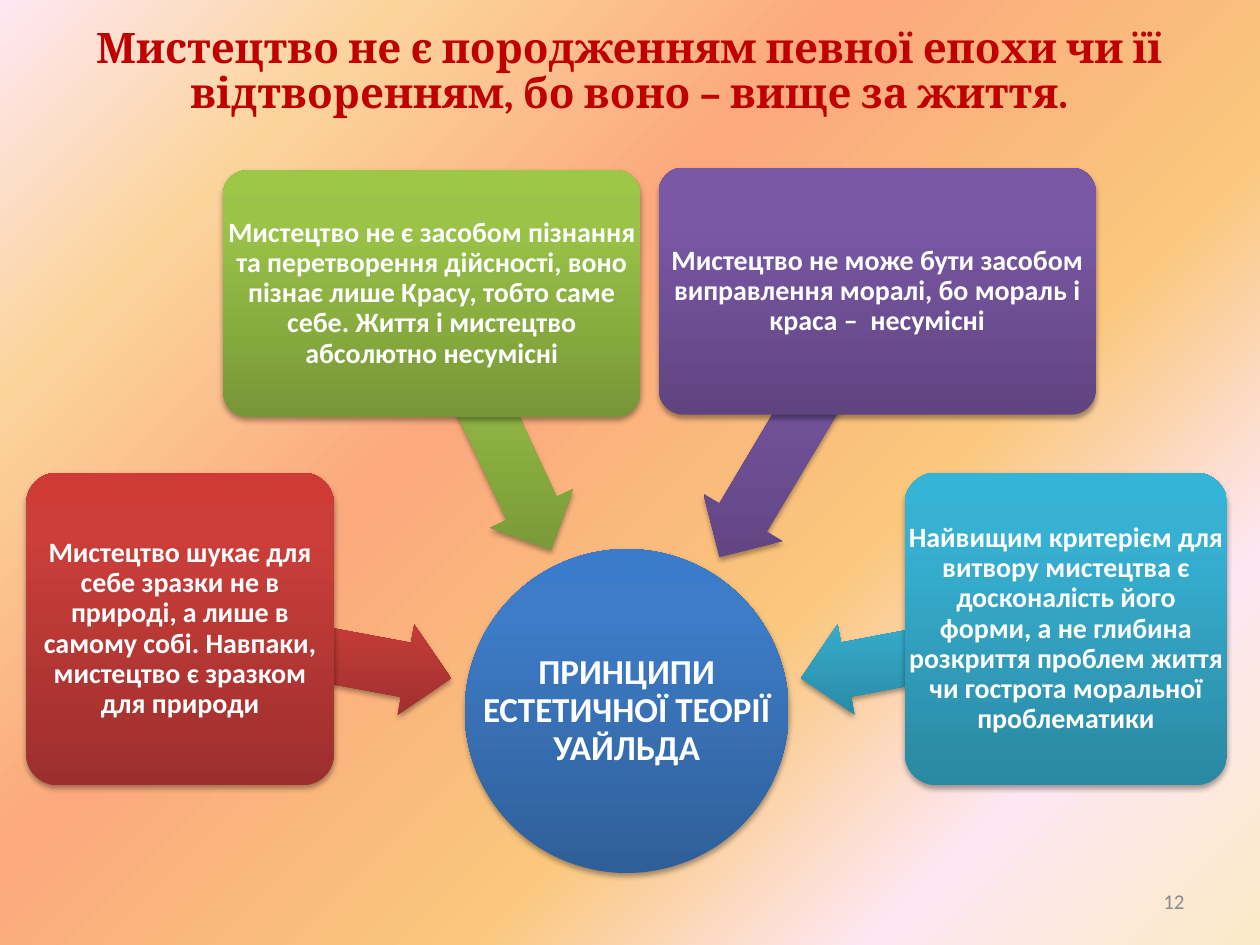
from lxml import etree
from pptx import Presentation
from pptx.dml.color import RGBColor
from pptx.enum.shapes import MSO_SHAPE
from pptx.enum.text import MSO_ANCHOR, PP_ALIGN
from pptx.oxml.ns import qn
from pptx.util import Cm, Pt

CIRCLE, ARROW, CARD = MSO_SHAPE.OVAL, MSO_SHAPE.LEFT_ARROW, MSO_SHAPE.ROUNDED_RECTANGLE
TOP, MIDDLE = MSO_ANCHOR.TOP, MSO_ANCHOR.MIDDLE
CENTER, RIGHT = PP_ALIGN.CENTER, PP_ALIGN.RIGHT

WHITE = RGBColor(0xFF, 0xFF, 0xFF)
GRAY = RGBColor(0x8C, 0x8C, 0x8C)
TITLE_RED = RGBColor(0xC0, 0x00, 0x00)
PINK = RGBColor(0xFE, 0xE7, 0xF2)
BACKDROP = [(0, RGBColor(0xFB, 0xEA, 0xC7)), (18, PINK),
            (36, RGBColor(0xFA, 0xC7, 0x7D)), (61, RGBColor(0xFB, 0xA9, 0x7D)),
            (82, RGBColor(0xFB, 0xD4, 0x9C)), (100, PINK)]
# Dark, main and bright tone of each gradient
BLUE = [RGBColor(0x2F, 0x5F, 0x99), RGBColor(0x3D, 0x7C, 0xC7), RGBColor(0x3A, 0x7C, 0xCB)]
RED = [RGBColor(0x9C, 0x2F, 0x2D), RGBColor(0xCB, 0x3E, 0x3A), RGBColor(0xCE, 0x3B, 0x37)]
GREEN = [RGBColor(0x77, 0x97, 0x37), RGBColor(0x9B, 0xC3, 0x48), RGBColor(0x9D, 0xC7, 0x46)]
PURPLE = [RGBColor(0x5F, 0x44, 0x80), RGBColor(0x7B, 0x58, 0xA6), RGBColor(0x7C, 0x57, 0xA8)]
CYAN = [RGBColor(0x2A, 0x88, 0xA2), RGBColor(0x37, 0xB1, 0xD2), RGBColor(0x34, 0xB4, 0xD6)]

deck = Presentation()
deck.slide_width, deck.slide_height = Cm(25.4), Cm(19.05)
page = deck.slides.add_slide(deck.slide_layouts[6])


def paint(owner, element, stops, angle):
    """Fill with a gradient of (percent, colour) stops, angle clockwise."""
    owner.fill.gradient()
    gradient = element.find(".//" + qn("a:gradFill"))
    gradient.set("rotWithShape", "0")
    stop_list = gradient.find(qn("a:gsLst"))
    for old_stop in list(stop_list):
        stop_list.remove(old_stop)
    for percent, color in stops:
        stop = etree.SubElement(stop_list, qn("a:gs"), pos=str(percent * 1000))
        etree.SubElement(stop, qn("a:srgbClr"), val=str(color))
    direction = gradient.find(qn("a:lin"))
    direction.set("ang", str(angle * 60000))
    direction.set("scaled", "0")


def write(place, text, size, color, font="Calibri", bold=True, align=CENTER,
          anchor=MIDDLE, spacing=0.9, margins=(0.08, 0.08)):
    box = page.shapes.add_textbox(*map(Cm, place))
    frame = box.text_frame
    frame.word_wrap = True
    frame.vertical_anchor = anchor
    frame.margin_left = frame.margin_right = Cm(margins[0])
    frame.margin_top = frame.margin_bottom = Cm(margins[1])
    para = frame.paragraphs[0]
    para.text = text
    para.alignment = align
    para.line_spacing = spacing
    para.font.name, para.font.size, para.font.bold = font, Pt(size), bold
    para.font.color.rgb = color


paint(page.background, page._element, BACKDROP, 225)

# Page number
write((18.21, 17.65, 5.92, 1.02), "12", 12, GRAY, bold=False, align=RIGHT,
      spacing=1.0, margins=(0.25, 0.13))

# Central circle, then each principle: arrow below its card
# Kind, place, rotation, tones, text, text size
parts = [
    (CIRCLE, (9.37, 11.07, 6.53, 6.53), 0, BLUE,
     "ПРИНЦИПИ ЕСТЕТИЧНОЇ ТЕОРІЇ УАЙЛЬДА", 20),
    (ARROW, (3.58, 12.24, 5.56, 1.85), 190.5, RED, "", 0),
    (CARD, (0.53, 9.53, 6.2, 6.3), 0, RED,
     "Мистецтво шукає для себе зразки не в природі, а лише в самому собі. "
     "Навпаки, мистецтво є зразком для природи", 16),
    (ARROW, (7.04, 7.57, 5.72, 1.85), 245, GREEN, "", 0),
    (CARD, (4.5, 3.43, 8.41, 4.98), 0, GREEN,
     "Мистецтво не є засобом пізнання та перетворення дійсності, воно пізнає "
     "лише Красу, тобто саме себе. Життя і мистецтво абсолютно несумісні", 16),
    (ARROW, (12.98, 7.62, 6.25, 1.85), 300.8, PURPLE, "", 0),
    (CARD, (13.28, 3.38, 8.81, 4.98), 0, PURPLE,
     "Мистецтво не може бути засобом виправлення моралі, бо мораль і "
     "краса –  несумісні", 16),
    (ARROW, (16.1, 12.24, 5.44, 1.85), 349.3, CYAN, "", 0),
    (CARD, (18.24, 9.53, 6.5, 6.3), 0, CYAN,
     "Найвищим критерієм для витвору мистецтва є досконалість його форми, "
     "а не глибина розкриття проблем життя чи гострота моральної "
     "проблематики", 16),
]
for kind, place, rotation, tones, text, size in parts:
    shape = page.shapes.add_shape(kind, *map(Cm, place))
    shape.rotation = rotation
    shape.line.fill.background()
    if kind == ARROW:
        shape.adjustments[0], shape.adjustments[1] = 0.6, 0.5
    elif kind == CARD:
        shape.adjustments[0] = 0.1
    paint(shape, shape._element, zip((0, 80, 100), tones), 270)

    # Soft shadow straight below
    shape.shadow.inherit = False
    effects = shape._element.spPr.find(qn("a:effectLst"))
    shadow = etree.SubElement(effects, qn("a:outerShdw"), blurRad=str(Pt(3.1)),
                              dist=str(Pt(1.8)), dir="5400000", rotWithShape="0")
    black = etree.SubElement(shadow, qn("a:srgbClr"), val="000000")
    etree.SubElement(black, qn("a:alpha"), val="35000")

    # Text spans the full frame of its shape
    if text:
        write(place, text, size, WHITE)

# Title
write((0.58, 0.41, 24.21, 2.11),
      "Мистецтво не є породженням певної епохи чи її відтворенням, "
      "бо воно – вище за життя.",
      24, TITLE_RED, font="Cambria", anchor=TOP, margins=(0.25, 0.13))

deck.save("out.pptx")
